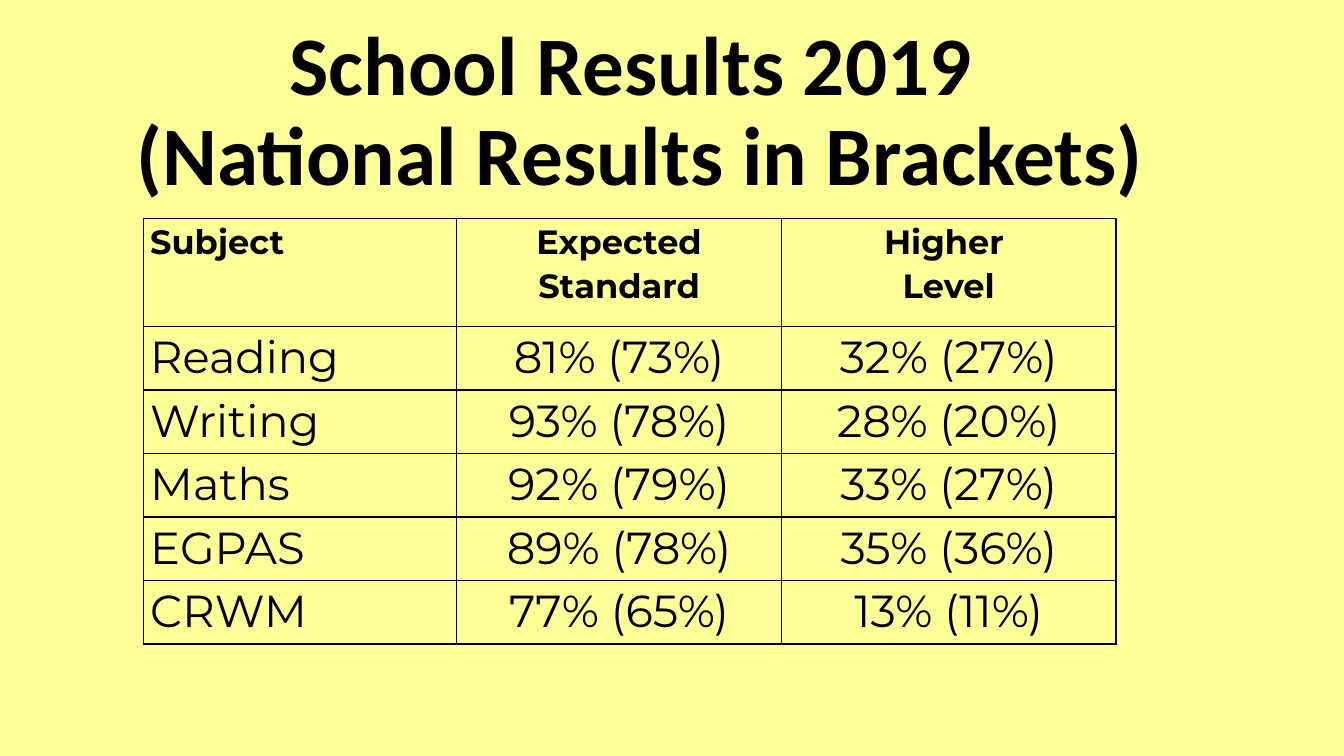
from pptx import Presentation
from pptx.dml.color import RGBColor
from pptx.enum.text import MSO_ANCHOR, PP_ALIGN
from pptx.oxml import parse_xml
from pptx.oxml.ns import nsdecls
from pptx.util import Inches, Pt

LEFT, CENTER = PP_ALIGN.LEFT, PP_ALIGN.CENTER
MIDDLE, TOP = MSO_ANCHOR.MIDDLE, MSO_ANCHOR.TOP
BLACK = RGBColor(0x00, 0x00, 0x00)
PALE_YELLOW = RGBColor(0xFF, 0xFF, 0x99)

TITLE_LINES = ["School Results 2019 ", "(National Results in Brackets)"]
COLUMN_WIDTHS = [3.11, 3.22, 3.32]
HEADER_HEIGHT, ROW_HEIGHT = 1.07, 0.63
RESULTS = [
    ["Subject", "Expected Standard", "Higher \nLevel"],
    ["Reading", "81% (73%)", "32% (27%)"],
    ["Writing", "93% (78%)", "28% (20%)"],
    ["Maths", "92% (79%)", "33% (27%)"],
    ["EGPAS", "89% (78%)", "35% (36%)"],
    ["CRWM", "77% (65%)", "13% (11%)"],
]


def apply_format(target, values):
    for name, value in values.items():
        setattr(target, name, value)


class ResultsSlide:
    title_font = {"name": "Calibri", "size": Pt(59.4), "bold": True}
    header_font = {"name": "Montserrat", "size": Pt(24), "bold": True}
    body_font = {"name": "Montserrat", "size": Pt(32), "bold": False}
    title_frame = {"word_wrap": True, "vertical_anchor": MIDDLE}
    cell_layout = {
        "margin_left": Inches(0.07), "margin_right": Inches(0.07),
        "margin_top": 0, "margin_bottom": 0, "vertical_anchor": TOP,
    }

    def __init__(self, deck):
        self.page = deck.slides.add_slide(deck.slide_layouts[6])
        background = self.page.background.fill
        background.solid()
        background.fore_color.rgb = PALE_YELLOW

    def add_span(self, para, text, font):
        span = para.add_run()
        span.text = text
        apply_format(span.font, font)
        span.font.color.rgb = BLACK

    def add_title(self, lines, left, top, width, height):
        box = self.page.shapes.add_textbox(
            Inches(left), Inches(top), Inches(width), Inches(height))
        apply_format(box.text_frame, self.title_frame)
        para = box.text_frame.paragraphs[0]
        apply_format(para, {"alignment": CENTER, "line_spacing": 0.9})
        for index, line in enumerate(lines):
            if index:
                para.add_line_break()
            self.add_span(para, line, self.title_font)

    def add_borders(self, cell):
        properties = cell._tc.get_or_add_tcPr()
        for index, side in enumerate(["lnL", "lnR", "lnT", "lnB"]):
            properties.insert(index, parse_xml(
                f'<a:{side} {nsdecls("a")} w="{Pt(1)}"><a:solidFill>'
                f'<a:srgbClr val="{BLACK}"/></a:solidFill></a:{side}>'))

    def fill_cell(self, cell, text, font, alignment):
        apply_format(cell, self.cell_layout)
        cell.fill.background()
        self.add_borders(cell)
        frame = cell.text_frame
        for index, line in enumerate(text.split("\n")):
            para = frame.add_paragraph() if index else frame.paragraphs[0]
            apply_format(para, {"alignment": alignment, "line_spacing": 1.07})
            self.add_span(para, line, font)

    def add_results_table(self, rows, left, top):
        heights = [HEADER_HEIGHT] + [ROW_HEIGHT] * (len(rows) - 1)
        table = self.page.shapes.add_table(
            len(rows), len(COLUMN_WIDTHS), Inches(left), Inches(top),
            Inches(sum(COLUMN_WIDTHS)), Inches(sum(heights))).table
        apply_format(table, {"first_row": False, "horz_banding": False})
        for column, width in zip(table.columns, COLUMN_WIDTHS):
            column.width = Inches(width)
        for row_index, texts in enumerate(rows):
            table.rows[row_index].height = Inches(heights[row_index])
            font = self.body_font if row_index else self.header_font
            for column_index, text in enumerate(texts):
                alignment = CENTER if column_index else LEFT
                self.fill_cell(table.cell(row_index, column_index),
                               text, font, alignment)


def main():
    deck = Presentation()
    deck.slide_width, deck.slide_height = Inches(13.33), Inches(7.5)
    slide = ResultsSlide(deck)
    slide.add_title(TITLE_LINES, 0.28, 0.4, 12.14, 1.45)
    slide.add_results_table(RESULTS, 1.42, 2.17)
    deck.save("out.pptx")


if __name__ == "__main__":
    main()
